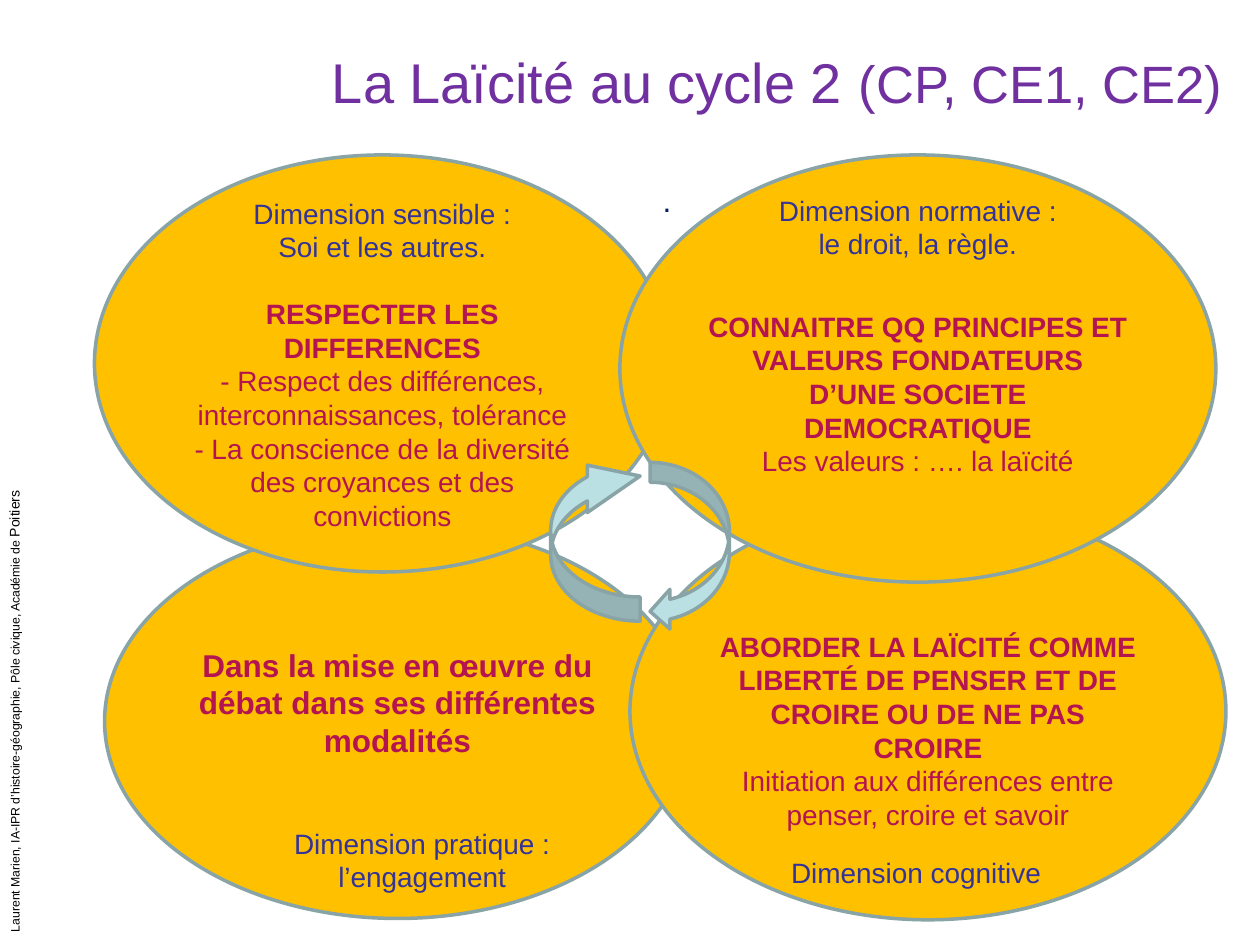
from dataclasses import dataclass

from pptx import Presentation
from pptx.dml.color import RGBColor
from pptx.enum.shapes import MSO_SHAPE
from pptx.enum.text import MSO_ANCHOR, PP_ALIGN
from pptx.util import Inches, Pt


@dataclass(frozen=True)
class Theme:
    font: str = "Arial"
    gold: str = "FFC000"
    edge: str = "89A4A7"
    ice: str = "BBE0E3"
    plum: str = "7030A0"
    blue: str = "333399"
    red: str = "B41450"
    navy: str = "002060"
    black: str = "000000"
    title: float = 32
    grades: float = 30
    lead: float = 18
    body: float = 16
    note: float = 8
    small: float = 7
    line: float = 2


THEME = Theme()


def rgb(code):
    return RGBColor.from_string(code)


def style(para, size, color, bold=False, align=PP_ALIGN.CENTER, gap=0):
    para.alignment = align
    para.space_before = Pt(gap)
    font = para.font
    font.name = THEME.font
    font.size = Pt(size)
    font.bold = bold
    font.color.rgb = rgb(color)


def add_form(slide, kind, box, fill):
    form = slide.shapes.add_shape(kind, *map(Inches, box))
    form.shadow.inherit = False
    form.fill.solid()
    form.fill.fore_color.rgb = rgb(fill)
    form.line.color.rgb = rgb(THEME.edge)
    form.line.width = Pt(THEME.line)
    return form


def add_petal(slide, box, lines, top=0, bottom=0):
    frame = add_form(slide, MSO_SHAPE.OVAL, box, THEME.gold).text_frame
    frame.word_wrap = True
    frame.vertical_anchor = MSO_ANCHOR.MIDDLE
    frame.margin_left = frame.margin_right = 0
    frame.margin_top = Inches(top)
    frame.margin_bottom = Inches(bottom)
    for i, (text, size, color, bold, gap) in enumerate(lines):
        para = frame.add_paragraph() if i else frame.paragraphs[0]
        para.text = text
        style(para, size, color, bold, gap=gap)


def add_label(slide, box, parts, color, align=PP_ALIGN.LEFT, turn=0,
              anchor=MSO_ANCHOR.TOP):
    label = slide.shapes.add_textbox(*map(Inches, box))
    label.rotation = turn
    frame = label.text_frame
    frame.word_wrap = True
    frame.vertical_anchor = anchor
    para = frame.paragraphs[0]
    style(para, parts[0][1], color, align=align)
    for text, size in parts:
        run = para.add_run()
        run.text = text
        if len(parts) > 1:
            run.font.size = Pt(size)


def add_arrow(slide, box, turn=0, bends=()):
    arrow = add_form(slide, MSO_SHAPE.CURVED_LEFT_ARROW, box, THEME.ice)
    arrow.rotation = turn
    for i, bend in enumerate(bends):
        arrow.adjustments[i] = bend


def add_petals(slide):
    t = THEME
    add_petal(slide, (0.83, 4.16, 4.65, 3.13), [
        ("Dans la mise en œuvre du débat dans ses différentes modalités",
         t.lead, t.red, True, 0),
    ], bottom=0.3)
    add_petal(slide, (0.75, 1.23, 4.57, 3.31), [
        ("Dimension sensible :", t.body, t.blue, False, 0),
        ("Soi et les autres.", t.body, t.blue, False, 0),
        ("RESPECTER LES DIFFERENCES", t.body, t.red, True, 19),
        ("- Respect des différences, interconnaissances, tolérance",
         t.body, t.red, False, 0),
        ("- La conscience de la diversité des croyances et des convictions",
         t.body, t.red, False, 0),
    ], top=0.02, bottom=0.01)
    add_petal(slide, (5, 3.99, 4.73, 3.31), [
        ("ABORDER LA LAÏCITÉ COMME LIBERTÉ DE PENSER ET DE CROIRE "
         "OU DE NE PAS CROIRE", t.body, t.red, True, 0),
        ("Initiation aux différences entre penser, croire et savoir",
         t.body, t.red, False, 0),
    ], top=0.3)
    add_petal(slide, (4.92, 1.23, 4.73, 3.39), [
        ("Dimension normative :", t.body, t.blue, False, 0),
        ("le droit, la règle.", t.body, t.blue, False, 0),
        ("CONNAITRE QQ PRINCIPES ET VALEURS FONDATEURS D’UNE SOCIETE "
         "DEMOCRATIQUE", t.body, t.red, True, 28),
        ("Les valeurs : …. la laïcité", t.body, t.red, False, 0),
    ], bottom=0.53)


def main():
    t = THEME
    deck = Presentation()
    deck.slide_width = Inches(10)
    deck.slide_height = Inches(7.5)
    slide = deck.slides.add_slide(deck.slide_layouts[6])
    add_label(slide, (0.5, 0.3, 9.3, 0.69),
              [("La Laïcité au cycle 2 ", t.title),
               ("(CP, CE1, CE2)", t.grades)],
              t.plum, PP_ALIGN.RIGHT, anchor=MSO_ANCHOR.MIDDLE)
    add_petals(slide)
    add_label(slide, (2.09, 6.51, 2.52, 0.64),
              [("Dimension pratique : l’engagement", t.body)],
              t.blue, PP_ALIGN.CENTER)
    add_label(slide, (6.18, 6.74, 2.48, 0.37),
              [("Dimension cognitive", t.body)], t.blue)
    add_arrow(slide, (4.37, 3.59, 0.71, 1.34), 180, (0.27, 0.53, 0.59))
    add_arrow(slide, (5.16, 3.67, 0.63, 1.34))
    add_label(slide, (-2.64, 4.62, 5.51, 0.24),
              [("Laurent Marien, IA-IPR d’histoire-géographie, Pôle civique, "
                "Académie de ", t.small), ("Poitiers", t.note)],
              t.black, turn=270)
    add_label(slide, (5.16, 1.39, 3.39, 0.4), [(".", t.lead)], t.navy)
    deck.save("out.pptx")


if __name__ == "__main__":
    main()
